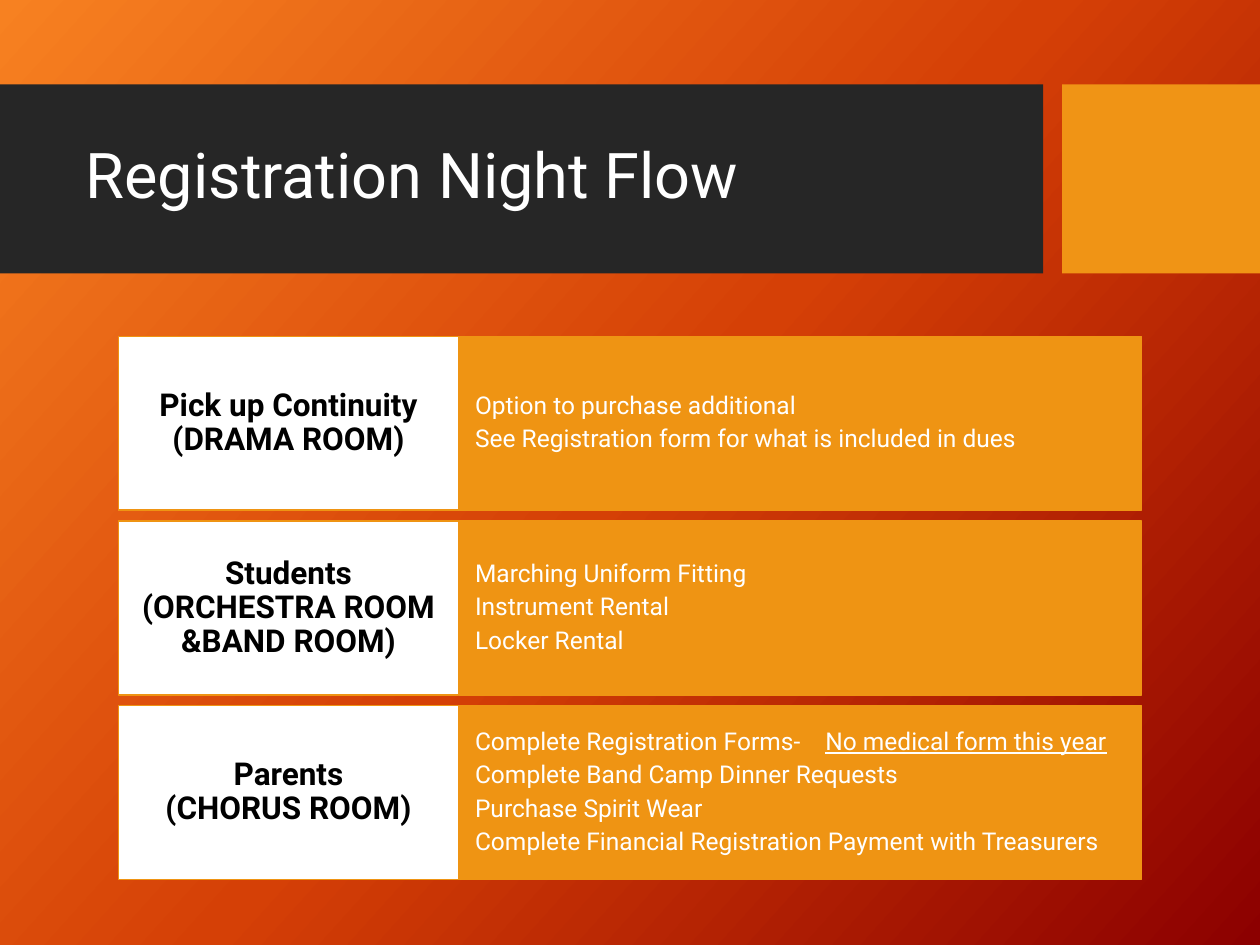
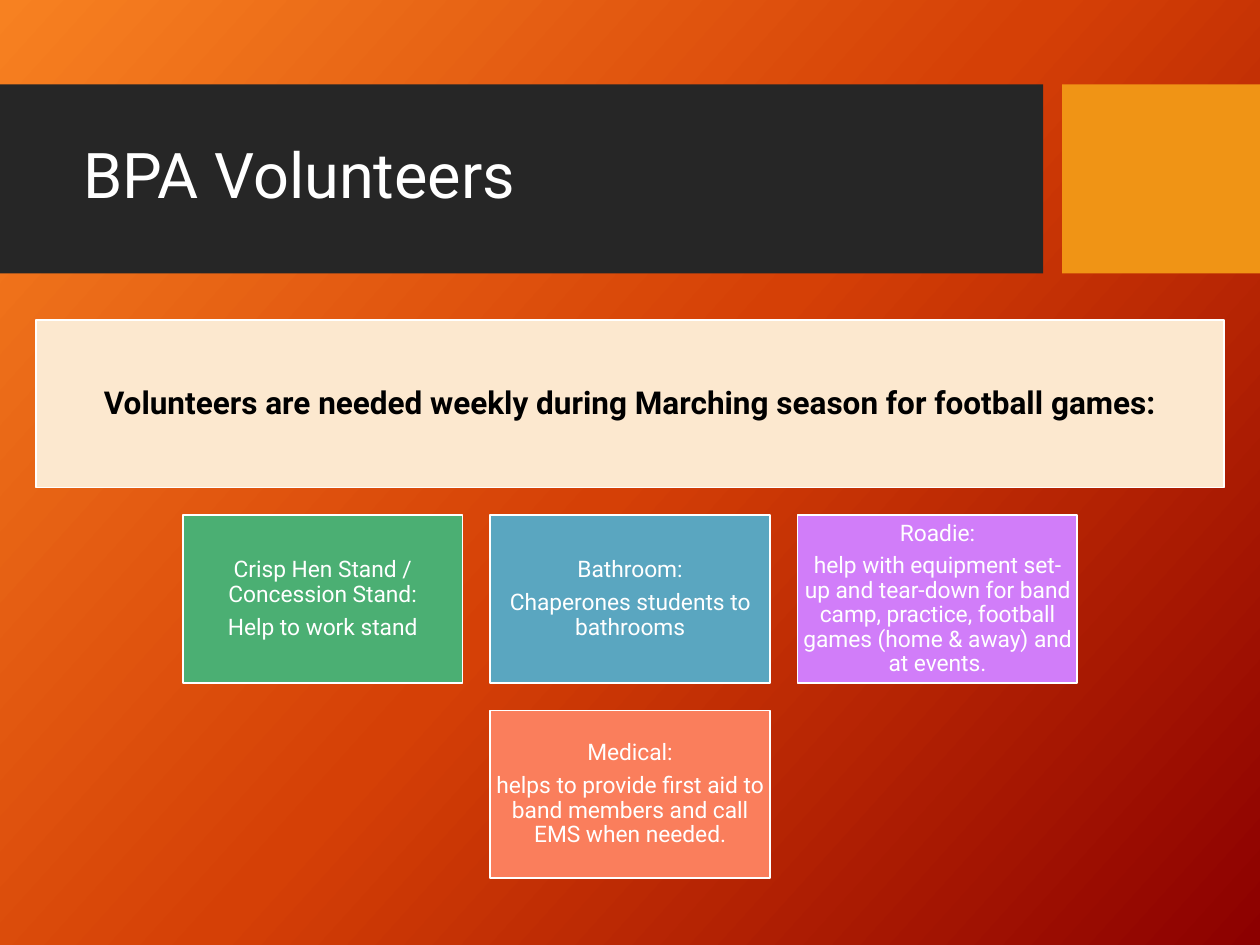
"""Build two band registration slides: the registration flow and the volunteer roles."""
from lxml import etree
from pptx import Presentation
from pptx.dml.color import RGBColor
from pptx.enum.shapes import MSO_SHAPE
from pptx.enum.text import MSO_ANCHOR, MSO_AUTO_SIZE, PP_ALIGN
from pptx.oxml import parse_xml
from pptx.oxml.ns import nsdecls, qn
from pptx.util import Inches, Pt

RECTANGLE = MSO_SHAPE.RECTANGLE
MIDDLE = MSO_ANCHOR.MIDDLE
NO_FIT = MSO_AUTO_SIZE.NONE
LEFT, CENTER = PP_ALIGN.LEFT, PP_ALIGN.CENTER

FONT = "Roboto"
WHITE = RGBColor(0xFF, 0xFF, 0xFF)
BLACK = RGBColor(0x00, 0x00, 0x00)
CHARCOAL = RGBColor(0x26, 0x26, 0x26)
AMBER = RGBColor(0xF0, 0x94, 0x15)
ORANGE = RGBColor(0xEF, 0x94, 0x13)
CREAM = RGBColor(0xFC, 0xE8, 0xCF)
GREEN = RGBColor(0x4B, 0xAF, 0x73)
BLUE = RGBColor(0x5A, 0xA6, 0xC0)
VIOLET = RGBColor(0xD1, 0x7D, 0xF9)
CORAL = RGBColor(0xFA, 0x7E, 0x5C)
GRADIENT = [
    (0, RGBColor(0xF7, 0x81, 0x21)),
    (50, RGBColor(0xD5, 0x40, 0x06)),
    (100, RGBColor(0x8C, 0x00, 0x00)),
]
GRADIENT_ANGLE = 42

SLIDE_WIDTH, SLIDE_HEIGHT = 10, 7.5
BAND_TOP, BAND_HEIGHT = 0.67, 1.5
BANDS = [(0, 8.28, CHARCOAL), (8.43, 1.57, AMBER)]
TITLE_TOP, TITLE_HEIGHT = 0.82, 1.18

FLOW_TITLE = "Registration Night Flow"
FLOW_STEPS = [
    (["Pick up Continuity (DRAMA ROOM)"],
     ["Option to purchase additional",
      "See Registration form for what is included in dues"]),
    (["Students", "(ORCHESTRA ROOM &BAND ROOM)"],
     ["Marching Uniform Fitting", "Instrument Rental", "Locker Rental"]),
    (["Parents", "(CHORUS ROOM)"],
     [("Complete Registration Forms-", "No medical form this year"),
      "Complete Band Camp Dinner Requests",
      "Purchase Spirit Wear",
      "Complete Financial Registration Payment with Treasurers"]),
]
FLOW_LEFT, FLOW_TOP = 0.94, 2.67
STEP_WIDTH, DETAIL_WIDTH = 2.7, 5.42
STEP_HEIGHT, STEP_PITCH = 1.38, 1.465
NOTE_TAB = 2.78

VOLUNTEER_TITLE = "BPA Volunteers"
VOLUNTEER_CALL = "Volunteers are needed weekly during Marching season for football games:"
ROLE_ROWS = [
    [(GREEN, ["Crisp Hen Stand / Concession Stand:", "Help to work stand"]),
     (BLUE, ["Bathroom:", "Chaperones students to bathrooms"]),
     (VIOLET, ["Roadie:",
               "help with equipment set-up and tear-down for band camp, practice, "
               "football games (home & away) and at events."])],
    [(CORAL, ["Medical:",
              "helps to provide first aid to band members and call EMS when needed."])],
]
CALL_WIDTH, CALL_TOP = 9.43, 2.54
ROLE_WIDTH, ROLE_HEIGHT, ROLE_GAP = 2.22, 1.33, 0.22


def add_span(para, text, size, color, bold=False, underline=False):
    span = para.add_run()
    span.text = text
    span.font.name = FONT
    span.font.size = Pt(size)
    span.font.color.rgb = color
    span.font.bold = bold
    span.font.underline = underline


def add_tab_stop(para, position):
    stops = etree.SubElement(para._p.get_or_add_pPr(), qn("a:tabLst"))
    etree.SubElement(stops, qn("a:tab"), pos=str(Inches(position)), algn="l")


def write_lines(box, lines, size, color, align=CENTER, bold=False, gap=0, inset=0.1):
    frame = box.text_frame
    frame.word_wrap = True
    frame.vertical_anchor = MIDDLE
    frame.margin_left = frame.margin_right = Inches(inset)
    frame.margin_top = frame.margin_bottom = Inches(0.05)
    for index, line in enumerate(lines):
        para = frame.add_paragraph() if index else frame.paragraphs[0]
        text, note = line if isinstance(line, tuple) else (line, None)
        if note:
            add_tab_stop(para, NOTE_TAB)
        para.alignment = align
        para.line_spacing = 0.9
        para.space_before = Pt(gap if index else 0)
        add_span(para, text + "\t" if note else text, size, color, bold)
        if note:
            add_span(para, note, size, color, bold, underline=True)


def add_box(page, left, top, width, height, fill, line=None):
    box = page.shapes.add_shape(
        RECTANGLE, Inches(left), Inches(top), Inches(width), Inches(height))
    box.shadow.inherit = False
    box.fill.solid()
    box.fill.fore_color.rgb = fill
    if line is None:
        box.line.fill.background()
    else:
        box.line.color.rgb = line
        box.line.width = Pt(1)
    return box


def paint_background(master):
    stops = "".join(
        f'<a:gs pos="{share * 1000}"><a:srgbClr val="{color}"/></a:gs>'
        for share, color in GRADIENT)
    gradient = parse_xml(
        f'<a:gradFill rotWithShape="1" {nsdecls("a")}><a:gsLst>{stops}</a:gsLst>'
        f'<a:lin ang="{GRADIENT_ANGLE * 60000}" scaled="0"/></a:gradFill>')
    master.background.fill.solid()
    solid = master.element.find(".//" + qn("p:bgPr")).find(qn("a:solidFill"))
    solid.getparent().replace(solid, gradient)


def add_page(deck, title, left, width):
    page = deck.slides.add_slide(deck.slide_layouts.get_by_name("Title Only"))
    heading = page.shapes.title
    heading.left, heading.top = Inches(left), Inches(TITLE_TOP)
    heading.width, heading.height = Inches(width), Inches(TITLE_HEIGHT)
    heading.text_frame.auto_size = NO_FIT
    write_lines(heading, [title], 36, WHITE, LEFT)
    for band_left, band_width, color in BANDS:
        band = add_box(page, band_left, BAND_TOP, band_width, BAND_HEIGHT, color)
        heading.element.addprevious(band.element)
    return page


def build_flow(deck):
    page = add_page(deck, FLOW_TITLE, 0.58, 7.54)
    for row, (step, details) in enumerate(FLOW_STEPS):
        top = FLOW_TOP + row * STEP_PITCH
        detail_box = add_box(page, FLOW_LEFT + STEP_WIDTH, top,
                             DETAIL_WIDTH, STEP_HEIGHT, ORANGE, ORANGE)
        write_lines(detail_box, details, 14, WHITE, LEFT, gap=3.9, inset=0.13)
        step_box = add_box(page, FLOW_LEFT, top, STEP_WIDTH, STEP_HEIGHT, WHITE, ORANGE)
        write_lines(step_box, step, 18, BLACK, bold=True, inset=0.09)


def build_volunteers(deck):
    page = add_page(deck, VOLUNTEER_TITLE, 0.56, 7.89)
    call_box = add_box(page, (SLIDE_WIDTH - CALL_WIDTH) / 2, CALL_TOP,
                       CALL_WIDTH, ROLE_HEIGHT, CREAM, WHITE)
    write_lines(call_box, [VOLUNTEER_CALL], 18, BLACK, bold=True, inset=0.07)
    pitch = ROLE_WIDTH + ROLE_GAP
    for row, roles in enumerate(ROLE_ROWS, start=1):
        top = CALL_TOP + row * (ROLE_HEIGHT + ROLE_GAP)
        row_left = (SLIDE_WIDTH - len(roles) * pitch + ROLE_GAP) / 2
        for column, (color, lines) in enumerate(roles):
            role_box = add_box(page, row_left + column * pitch, top,
                               ROLE_WIDTH, ROLE_HEIGHT, color, WHITE)
            write_lines(role_box, lines, 13, WHITE, gap=4.5, inset=0.04)


def main():
    deck = Presentation()
    deck.slide_width, deck.slide_height = Inches(SLIDE_WIDTH), Inches(SLIDE_HEIGHT)
    paint_background(deck.slide_master)
    build_flow(deck)
    build_volunteers(deck)
    deck.save("out.pptx")


if __name__ == "__main__":
    main()
